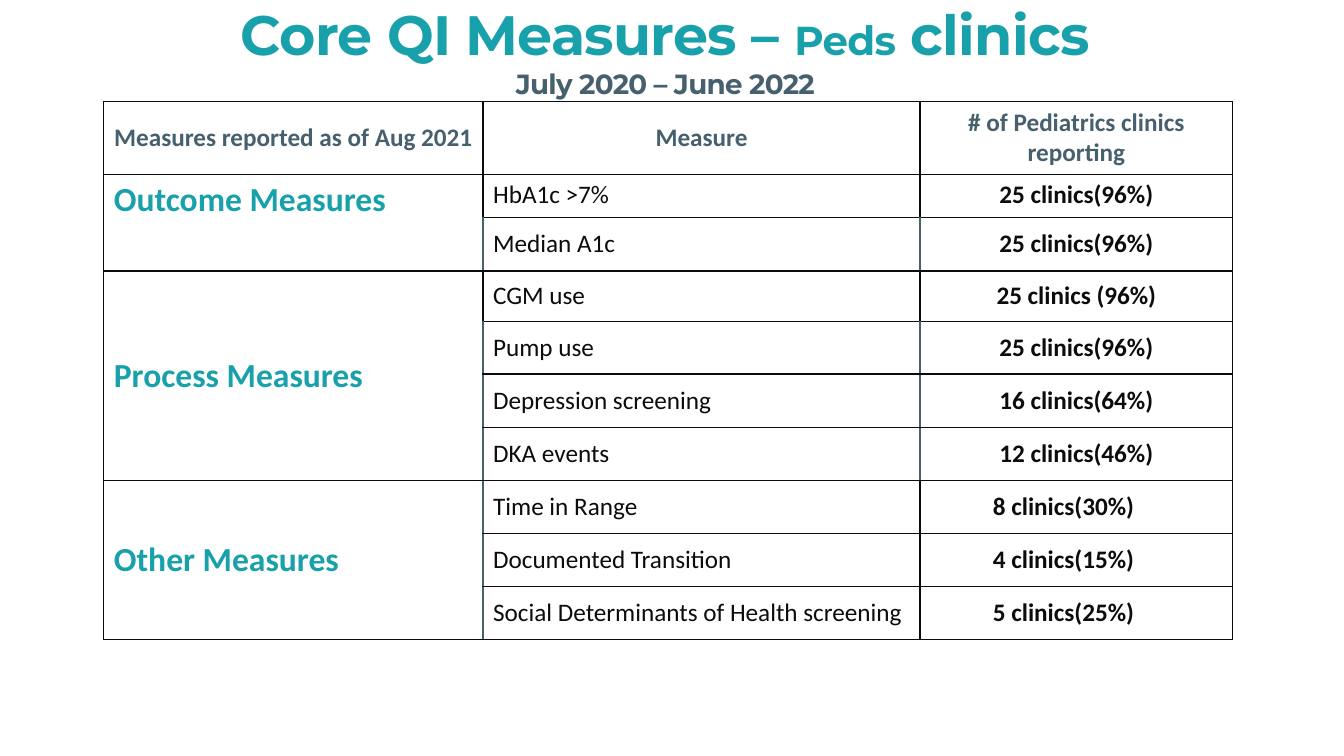
import pptx
import pptx.dml.color
import pptx.enum.text
import pptx.oxml.ns
import pptx.util
from dataclasses import dataclass
from lxml import etree

Pt = pptx.util.Pt
ALIGN = pptx.enum.text.PP_ALIGN
ANCHOR = pptx.enum.text.MSO_ANCHOR


@dataclass(frozen=True)
class Theme:
    teal: str = "18A1AB"
    slate: str = "47606D"
    ink: str = "0C0C0C"
    paper: str = "FFFFFF"
    heading_font: str = "Montserrat"
    table_font: str = "Calibri"
    title_size: float = 39.6
    peds_size: float = 28.8
    period_size: float = 19.8
    group_size: float = 24
    cell_size: float = 18


THEME = Theme()
TITLE_BOX = (43.2, 18, 864, 36)
TABLE_BOX = (74.16, 72.72, 806.4, 396)
COLUMN_WIDTHS = (270.9, 312.2, 223.3)
ROW_HEIGHTS = (51.7, 31, 38.2, 36.2, 37.4) + (38,) * 5
TALLY_INDENT = 52

HEADINGS = ("Measures reported as of Aug 2021", "Measure",
            "# of Pediatrics clinics reporting")
MEASURE_GROUPS = (
    ("Outcome Measures", (("HbA1c >7%", "25 clinics(96%)"),
                          ("Median A1c", "25 clinics(96%)"))),
    ("Process Measures", (("CGM use", "25 clinics (96%)"),
                          ("Pump use", "25 clinics(96%)"),
                          ("Depression screening", "16 clinics(64%)"),
                          ("DKA events", "12 clinics(46%)"))),
    ("Other Measures", (("Time in Range", "8 clinics(30%)"),
                        ("Documented Transition", "4 clinics(15%)"),
                        ("Social Determinants of Health screening", "5 clinics(25%)"))),
)


def rgb(color):
    return pptx.dml.color.RGBColor.from_string(color)


def apply(target, formats):
    for name, value in formats.items():
        setattr(target, name, value)


def add_run(paragraph, words, color, font, size, bold=True):
    run = paragraph.add_run()
    run.text = words
    apply(run.font, {"name": font, "size": Pt(size), "bold": bold})
    run.font.color.rgb = rgb(color)
    return run


def build_heading(slide, box):
    heading = slide.shapes.title
    apply(heading, dict(zip(("left", "top", "width", "height"), map(Pt, box))))
    frame = heading.text_frame
    apply(frame, {"word_wrap": True, "vertical_anchor": ANCHOR.MIDDLE,
                  "auto_size": pptx.enum.text.MSO_AUTO_SIZE.NONE,
                  **{f"margin_{side}": Pt(3.6) for side in ("left", "top", "right", "bottom")}})
    line = frame.paragraphs[0]
    apply(line, {"alignment": ALIGN.CENTER, "line_spacing": 1.0, "space_before": Pt(0)})
    pieces = (("Core QI Measures – ", THEME.teal, THEME.title_size),
              ("Peds", THEME.teal, THEME.peds_size),
              (" clinics", THEME.teal, THEME.title_size),
              ("July 2020 – June 2022", THEME.slate, THEME.period_size))
    for words, color, size in pieces:
        if color == THEME.slate:
            line.add_line_break()
        run = add_run(line, words, color, THEME.heading_font, size)
        run.font._element.set("spc", "-50")


def draw_borders(cell, left, right):
    properties = cell._tc.get_or_add_tcPr()
    for side, color in (("L", left), ("R", right), ("T", THEME.ink), ("B", THEME.ink)):
        border = etree.SubElement(properties, pptx.oxml.ns.qn(f"a:ln{side}"), w=str(Pt(1)))
        fill = etree.SubElement(border, pptx.oxml.ns.qn("a:solidFill"))
        etree.SubElement(fill, pptx.oxml.ns.qn("a:srgbClr"), val=color)


def fill_cell(cell, words="", color=THEME.ink, size=THEME.cell_size, bold=True,
              align=ALIGN.LEFT, anchor=ANCHOR.MIDDLE, left=THEME.ink, right=THEME.ink):
    draw_borders(cell, left, right)
    cell.fill.solid()
    cell.fill.fore_color.rgb = rgb(THEME.paper)
    cell.vertical_anchor = anchor
    if words:
        paragraph = cell.text_frame.paragraphs[0]
        paragraph.alignment = align
        add_run(paragraph, words, color, THEME.table_font, size, bold)


def build_measure_table(slide, box):
    table = slide.shapes.add_table(len(ROW_HEIGHTS), len(COLUMN_WIDTHS), *map(Pt, box)).table
    apply(table, {"first_row": False, "horz_banding": False})
    for column, width in zip(table.columns, COLUMN_WIDTHS):
        column.width = Pt(width)
    for row, height in zip(table.rows, ROW_HEIGHTS):
        row.height = Pt(height)

    # Column headings
    for column, words in enumerate(HEADINGS):
        fill_cell(table.cell(0, column), words, THEME.slate, align=ALIGN.CENTER)

    # Measure groups, each under one merged label
    row = 1
    for group, measures in MEASURE_GROUPS:
        outcome = group == "Outcome Measures"
        other = group == "Other Measures"
        label_edge = THEME.slate if other else THEME.ink
        label = table.cell(row, 0)
        label.merge(table.cell(row + len(measures) - 1, 0))
        for index, (measure, tally) in enumerate(measures):
            first = index == 0
            anchor = ANCHOR.TOP if outcome and first else ANCHOR.MIDDLE
            fill_cell(table.cell(row, 0), group if first else "", THEME.teal,
                      THEME.group_size, anchor=anchor, right=label_edge)
            fill_cell(table.cell(row, 1), measure, bold=False, anchor=anchor,
                      left=THEME.ink if first and not other else THEME.slate,
                      right=THEME.ink if first or other else THEME.slate)
            tally_cell = table.cell(row, 2)
            fill_cell(tally_cell, tally, anchor=anchor,
                      align=ALIGN.LEFT if other else ALIGN.CENTER,
                      left=THEME.ink if first or other else THEME.slate)
            if other:
                tally_cell.margin_left = Pt(TALLY_INDENT)
            row += 1


def main():
    deck = pptx.Presentation()
    apply(deck, {"slide_width": Pt(960), "slide_height": Pt(540)})
    slide = deck.slides.add_slide(deck.slide_layouts[5])
    build_heading(slide, TITLE_BOX)
    build_measure_table(slide, TABLE_BOX)
    deck.save("out.pptx")


if __name__ == "__main__":
    main()
